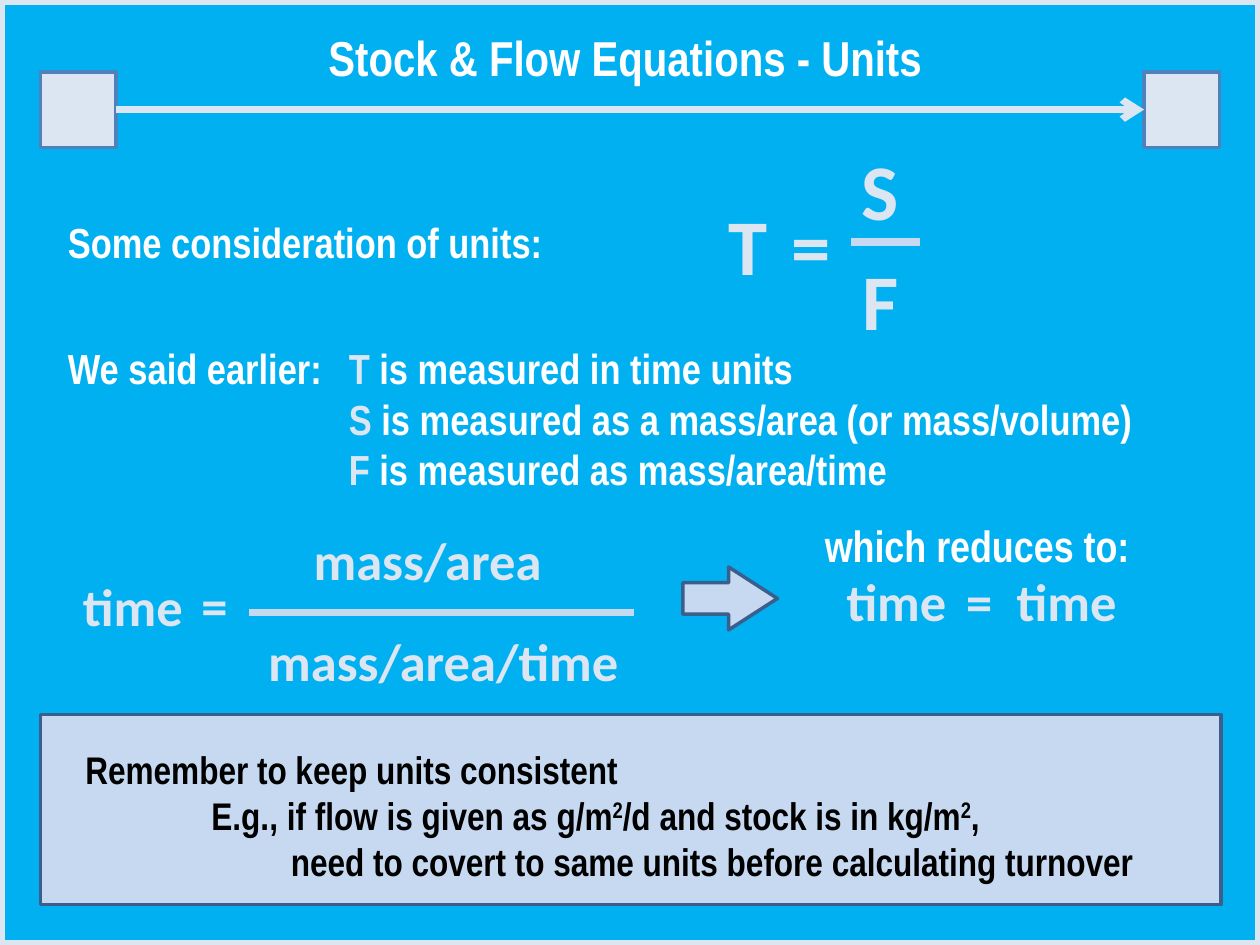
from lxml import etree
from pptx import Presentation
from pptx.dml.color import RGBColor
from pptx.enum.shapes import MSO_CONNECTOR, MSO_SHAPE
from pptx.enum.text import MSO_ANCHOR, MSO_AUTO_SIZE, PP_ALIGN
from pptx.oxml.ns import qn
from pptx.util import Inches, Pt

STRAIGHT = MSO_CONNECTOR.STRAIGHT
RECTANGLE, RIGHT_ARROW = MSO_SHAPE.RECTANGLE, MSO_SHAPE.RIGHT_ARROW
TOP = MSO_ANCHOR.TOP
GROW = MSO_AUTO_SIZE.SHAPE_TO_FIT_TEXT
LEFT, CENTER = PP_ALIGN.LEFT, PP_ALIGN.CENTER

SKY, PALE, SOFT = "00B0F0", "DCE6F2", "C6D9F1"
WHITE, BLACK, BLUE, NAVY = "FFFFFF", "000000", "4F81BD", "3A5F8C"

TITLE_FORMAT = {"name": "Arial Narrow", "size": Pt(28), "bold": True, "color": WHITE}
BODY_FORMAT = {**TITLE_FORMAT, "size": Pt(24)}
RESULT_FORMAT = {**TITLE_FORMAT, "size": Pt(25)}
NOTE_FORMAT = {**TITLE_FORMAT, "size": Pt(22), "color": BLACK}
UNIT_FORMAT = {"name": "Calibri", "size": Pt(30), "bold": True, "color": PALE}
SYMBOL_FORMAT = {**UNIT_FORMAT, "size": Pt(45)}


def rgb(value):
    return RGBColor.from_string(value)


def format_font(font, values):
    for name, value in values.items():
        if name == "color":
            font.color.rgb = rgb(value)
        else:
            setattr(font, name, value)


def write_text(shape, paragraphs, values, align=LEFT):
    """Each paragraph is (left margin, first-line indent, runs); a run is (text, changes)."""
    frame = shape.text_frame
    settings = {"word_wrap": True, "auto_size": GROW, "vertical_anchor": TOP}
    for name, value in settings.items():
        setattr(frame, name, value)
    for index, (margin, indent, runs) in enumerate(paragraphs):
        paragraph = frame.paragraphs[0] if index == 0 else frame.add_paragraph()
        paragraph.alignment = align
        properties = paragraph._p.get_or_add_pPr()
        properties.set("marL", str(Inches(margin)))
        properties.set("indent", str(Inches(indent)))
        for text, changes in runs:
            run = paragraph.add_run()
            run.text = text
            changes = dict(changes)
            baseline = changes.pop("baseline", None)
            format_font(run.font, {**values, **changes})
            if baseline:
                run._r.get_or_add_rPr().set("baseline", str(baseline))


def add_text(shapes, box, paragraphs, values, align=LEFT):
    if isinstance(paragraphs, str):
        paragraphs = [(0, 0, [(paragraphs, {})])]
    shape = shapes.add_textbox(*map(Inches, box))
    write_text(shape, paragraphs, values, align)


def add_box(shapes, kind, box, fill, line, width=2):
    shape = shapes.add_shape(kind, *map(Inches, box))
    shape.shadow.inherit = False
    if fill:
        shape.fill.solid()
        shape.fill.fore_color.rgb = rgb(fill)
    else:
        shape.fill.background()
    shape.line.color.rgb = rgb(line)
    shape.line.width = Pt(width)
    return shape


def add_line(shapes, start, end, color, width):
    connector = shapes.add_connector(STRAIGHT, *map(Inches, start + end))
    connector.line.color.rgb = rgb(color)
    connector.line.width = Pt(width)
    etree.SubElement(connector._element.spPr, qn("a:effectLst"))
    return connector


def add_header(slide, left, top, width, size):
    shapes = slide.shapes
    # Stock boxes joined by the flow arrow
    stocks = [add_box(shapes, RECTANGLE, (x, top, size, size), PALE, BLUE)
              for x in (left, left + width - size)]
    middle = top + size / 2
    flow = add_line(shapes, (left + size, middle), (left + width - size, middle), PALE, 4)
    flow.begin_connect(stocks[0], 3)
    flow.end_connect(stocks[1], 1)
    etree.SubElement(flow.line._get_or_add_ln(), qn("a:tailEnd"), type="arrow")
    # Title
    title = shapes.title
    title.left, title.top = Inches(left + 0.43), Inches(top - 0.4)
    title.width, title.height = Inches(8.42), Inches(0.57)
    write_text(title, [(0, 0, [("Stock & Flow Equations - Units", {})])],
               TITLE_FORMAT, CENTER)


def add_definitions(slide, left, top, width):
    add_text(slide.shapes, (left, top, 4.52, 0.5), "Some consideration of units:", BODY_FORMAT)
    column = 2.23
    measures = [("T", " is measured in time units"),
                ("S", " is measured as a mass/area (or mass/volume)"),
                ("F", " is measured as mass/area/time")]
    paragraphs = [(column, 0, [(symbol, {"color": PALE}), (text, {})])
                  for symbol, text in measures]
    first_runs = [("We said earlier:\t", {})] + paragraphs[0][2]
    paragraphs[0] = (column, -column, first_runs)
    add_text(slide.shapes, (left, top + 1, width, 1.31), paragraphs, BODY_FORMAT)


def add_symbol_equation(slide, left, top):
    shapes = slide.shapes.add_group_shape().shapes
    terms = [("T", 0, 0.43), ("=", 0.5, 0.43), ("S", 1.06, 0), ("F", 1.07, 0.87)]
    for text, x, y in terms:
        add_text(shapes, (left + x, top + y, 0.57, 0.86), text, SYMBOL_FORMAT)
    add_line(shapes, (left + 1.07, top + 0.84), (left + 1.62, top + 0.84), SOFT, 5)


def add_unit_equation(slide, left, top):
    shapes = slide.shapes
    terms = [("time", 0, 0.37, 1.27, CENTER), ("=", 1.08, 0.36, 0.48, LEFT),
             ("mass/area", 1.81, 0, 2.33, CENTER),
             ("mass/area/time", 1.56, 0.8, 3.08, CENTER)]
    for text, x, y, width, align in terms:
        add_text(shapes, (left + x, top + y, width, 0.61), text, UNIT_FORMAT, align)
    add_line(shapes, (left + 1.56, top + 0.72), (left + 4.61, top + 0.72), SOFT, 4)


def add_result(slide, left, top):
    shapes = slide.shapes
    arrow = add_box(shapes, RIGHT_ARROW, (left, top + 0.43, 0.75, 0.5), SOFT, NAVY)
    arrow.adjustments[0], arrow.adjustments[1] = 0.5, 0.775
    add_text(shapes, (left + 0.75, top, 3.17, 0.52), "which reduces to:",
             RESULT_FORMAT, CENTER)
    terms = [("time", 1.06, 1.27, CENTER), ("=", 2.15, 0.48, LEFT),
             ("time", 2.41, 1.27, CENTER)]
    for text, x, width, align in terms:
        add_text(shapes, (left + x, top + 0.4, width, 0.61), text, UNIT_FORMAT, align)


def add_reminder(slide, left, top, width, height):
    add_box(slide.shapes, RECTANGLE, (left, top, width, height), SOFT, NAVY)
    squared = ("2", {"baseline": 30000})
    paragraphs = [
        (0, 0, [("Remember to keep units consistent", {})]),
        (1, 0, [("E.g., if flow is given as g/m", {}), squared,
                ("/d and stock is in kg/m", {}), squared, (",", {})]),
        (1.63, 0, [("need to covert to same units before calculating turnover", {})]),
    ]
    add_text(slide.shapes, (left + 0.26, top + 0.2, width - 0.62, height - 0.3),
             paragraphs, NOTE_FORMAT)


def main():
    presentation = Presentation()
    presentation.slide_width, presentation.slide_height = Inches(10), Inches(7.5)
    slide = presentation.slides.add_slide(presentation.slide_layouts[5])
    slide.background.fill.solid()
    slide.background.fill.fore_color.rgb = rgb(SKY)
    # Slide border
    add_box(slide.shapes, RECTANGLE, (0, 0, 10, 7.5), None, PALE, 6)
    add_header(slide, 0.32, 0.57, 9.36, 0.6)
    add_definitions(slide, 0.44, 1.67, 9.24)
    add_unit_equation(slide, 0.42, 4.14)
    add_result(slide, 5.42, 4.07)
    add_reminder(slide, 0.32, 5.67, 9.37, 1.51)
    add_symbol_equation(slide, 5.68, 1.08)
    presentation.save("out.pptx")


if __name__ == "__main__":
    main()
